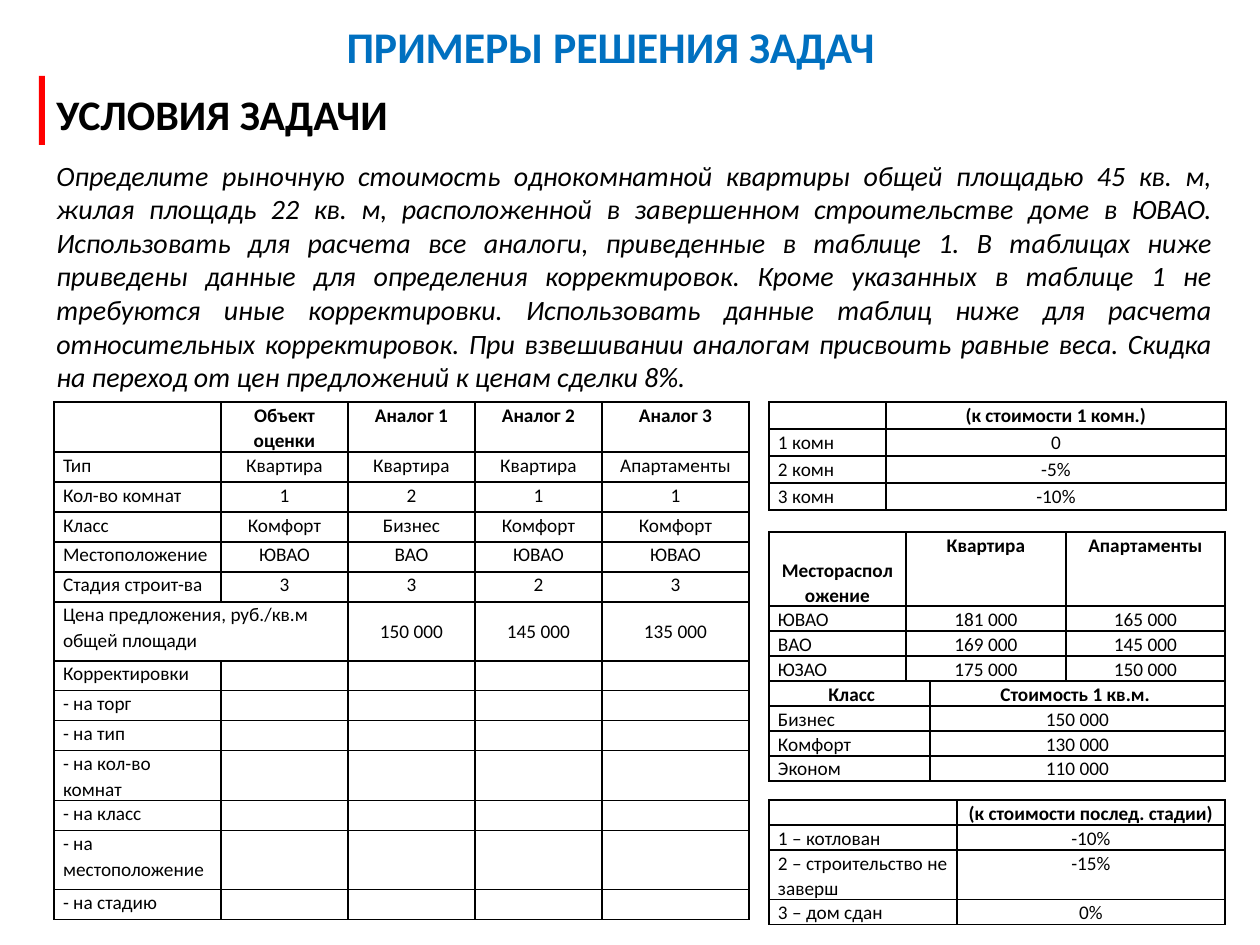
"""Builds a slide with a flat valuation task and its adjustment tables."""
from dataclasses import dataclass

from lxml.etree import SubElement
from pptx import Presentation
from pptx.dml.color import RGBColor
from pptx.enum.shapes import MSO_SHAPE
from pptx.enum.text import MSO_ANCHOR, MSO_AUTO_SIZE, PP_ALIGN
from pptx.oxml import parse_xml
from pptx.oxml.ns import nsdecls, qn
from pptx.util import Emu, Pt

PX = 914400 / 126


@dataclass(frozen=True)
class Theme:
    font: str = "Calibri"
    title: str = "0070C0"
    accent: str = "FF0000"
    ink: str = "000000"
    title_size: int = 25
    heading_size: int = 24
    body_size: int = 16
    table_size: int = 11


T = Theme()


def px(n):
    return Emu(round(n * PX))


def set_font(p, size, color=T.ink, bold=False, italic=False):
    p.font.name, p.font.size = T.font, Pt(size)
    p.font.bold, p.font.italic = bold, italic
    p.font.color.rgb = RGBColor.from_string(color)


prs = Presentation()
prs.slide_width, prs.slide_height = px(1260), px(945)
s = prs.slides.add_slide(prs.slide_layouts[6])

TASK = (
    "Определите рыночную стоимость однокомнатной квартиры общей площадью 45 кв. м, "
    "жилая площадь 22 кв. м, расположенной в завершенном строительстве доме в ЮВАО. "
    "Использовать для расчета все аналоги, приведенные в таблице 1. "
    "В таблицах ниже приведены данные для определения корректировок. "
    "Кроме указанных в таблице 1 не требуются иные корректировки. "
    "Использовать данные таблиц ниже для расчета относительных корректировок. "
    "При взвешивании аналогам присвоить равные веса. "
    "Скидка на переход от цен предложений к ценам сделки 8%."
)
TEXTS = [
    ("ПРИМЕРЫ РЕШЕНИЯ ЗАДАЧ", (134, 14, 953, 66), PP_ALIGN.CENTER, True, 0,
     dict(size=T.title_size, color=T.title, bold=True)),
    (TASK, (44, 152, 1181, 251), PP_ALIGN.JUSTIFY, True, 4.5,
     dict(size=T.body_size, italic=True)),
    ("УСЛОВИЯ ЗАДАЧИ", (44, 82, 360, 63), PP_ALIGN.LEFT, False, 0,
     dict(size=T.heading_size, bold=True)),
]
for text, box, align, wrap, gap, font in TEXTS:
    tf = s.shapes.add_textbox(*map(px, box)).text_frame
    tf.word_wrap, tf.auto_size = wrap, MSO_AUTO_SIZE.SHAPE_TO_FIT_TEXT
    p = tf.paragraphs[0]
    p.text, p.alignment = text, align
    p.space_before = p.space_after = Pt(gap)
    set_font(p, **font)

sp = s.shapes.add_shape(MSO_SHAPE.RECTANGLE, *map(px, (39, 76, 6, 69)))
sp.shadow.inherit = False
sp.fill.solid()
sp.fill.fore_color.rgb = RGBColor.from_string(T.accent)
sp.line.fill.background()

PRICE = "Цена предложения, руб./кв.м общей площади"
CORRECTIONS = ["Корректировки", "- на торг", "- на тип", "- на кол-во комнат",
               "- на класс", "- на местоположение", "- на стадию"]
TABLES = [
    ((54, 402), (167, 127, 127, 127, 147),
     (50, 30, 30, 30, 30, 30, 59, 30, 30, 30, 50, 30, 59, 30), [
        ["", "Объект оценки", "Аналог 1", "Аналог 2", "Аналог 3"],
        ["Тип", "Квартира", "Квартира", "Квартира", "Апартаменты"],
        ["Кол-во комнат", "1", "2", "1", "1"],
        ["Класс", "Комфорт", "Бизнес", "Комфорт", "Комфорт"],
        ["Местоположение", "ЮВАО", "ВАО", "ЮВАО", "ЮВАО"],
        ["Стадия строит-ва", "3", "3", "2", "3"],
        [PRICE, "", "150 000", "145 000", "135 000"],
        *([name, "", "", "", ""] for name in CORRECTIONS)]),
    ((769, 402), (117, 340), (27, 27, 27, 27), [
        ["", "(к стоимости 1 комн.)"],
        ["1 комн", "0"], ["2 комн", "-5%"], ["3 комн", "-10%"]]),
    ((769, 532), (137, 160, 159), (50, 25, 25, 25), [
        [" Месторасположение", "Квартира", "Апартаменты"],
        ["ЮВАО", "181 000", "165 000"],
        ["ВАО", "169 000", "145 000"],
        ["ЮЗАО", "175 000", "150 000"]]),
    ((769, 681), (161, 295), (25, 25, 25, 25), [
        [" Класс", "Стоимость 1 кв.м. "],
        ["Бизнес", "150 000"], ["Комфорт", "130 000"], ["Эконом", "110 000"]]),
    ((769, 800), (188, 268), (25, 25, 49, 25), [
        ["", "(к стоимости послед. стадии)"],
        ["1 – котлован", "-10%"],
        ["2 – строительство не заверш", "-15%"],
        ["3 – дом сдан", "0%"]]),
]
for (x, y), cols, rows, data in TABLES:
    size = (len(rows), len(cols))
    box = (x, y, sum(cols), sum(rows))
    table = s.shapes.add_table(*size, *map(px, box)).table
    table.first_row = table.horz_banding = False
    for col, width in zip(table.columns, cols):
        col.width = px(width)
    for row, height in zip(table.rows, rows):
        row.height = px(height)
    for i, values in enumerate(data):
        for j, value in enumerate(values):
            cell = table.cell(i, j)
            cell.fill.background()
            cell.margin_left = cell.margin_right = px(9)
            cell.margin_top = cell.margin_bottom = 0
            if values[0] == PRICE and j > 1:
                cell.vertical_anchor = MSO_ANCHOR.MIDDLE
            p = cell.text_frame.paragraphs[0]
            p.text, p.line_spacing = value, 1.07
            p.alignment = PP_ALIGN.CENTER if i == 0 or j > 0 else PP_ALIGN.LEFT
            set_font(p, T.table_size, bold=i == 0)
            if not value:
                SubElement(p._p, qn("a:endParaRPr"), sz=str(T.table_size * 100))
            for k, side in enumerate("LRTB"):
                cell._tc.get_or_add_tcPr().insert(k, parse_xml(
                    f'<a:ln{side} {nsdecls("a")} w="{Pt(1)}"><a:solidFill>'
                    f'<a:srgbClr val="{T.ink}"/></a:solidFill></a:ln{side}>'))
        if values[0] == PRICE:
            table.cell(i, 0).merge(table.cell(i, 1))

prs.save("out.pptx")
